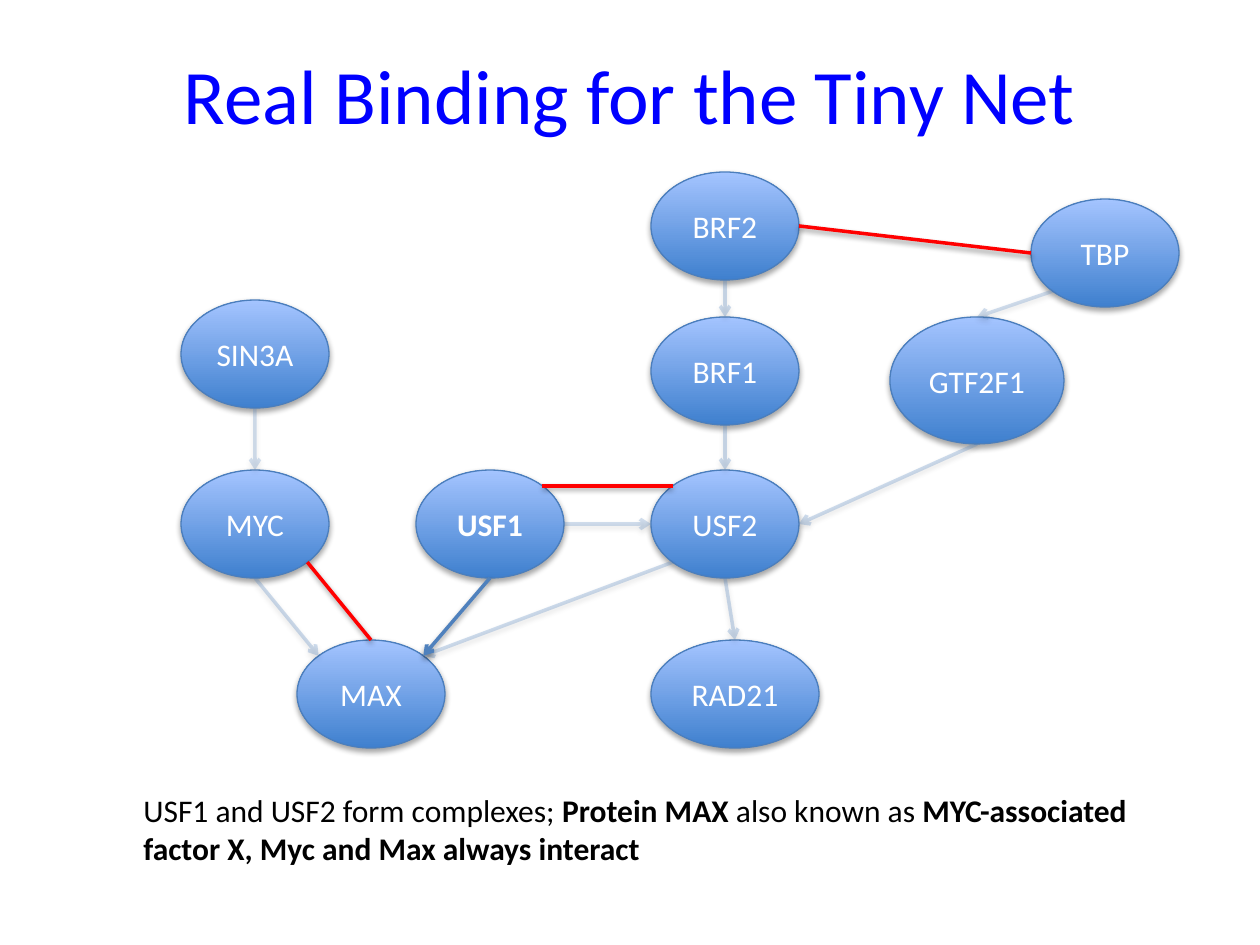
import math
from dataclasses import dataclass

import lxml.etree
import pptx
import pptx.dml.color
import pptx.enum.shapes
import pptx.enum.text
import pptx.oxml.ns
import pptx.util

EMU_PER_PX = 914400 / 126
FONT = "Calibri"
BLUE, RED = "4F81BD", "FF0000"

# Connection sites of an ellipse, counter-clockwise from the top
TOP, TOP_LEFT, LEFT, BOTTOM_LEFT, BOTTOM, BOTTOM_RIGHT, RIGHT, TOP_RIGHT = range(8)


@dataclass
class Protein:
    name: str
    left: int
    top: int
    width: int = 148
    height: int = 108
    bold: bool = False

    def site(self, index: int) -> tuple[float, float]:
        angle = math.radians(90 + 45 * index)
        return (self.left + self.width / 2 * (1 + math.cos(angle)),
                self.top + self.height / 2 * (1 - math.sin(angle)))


@dataclass
class Binding:
    source: str
    source_site: int
    target: str
    target_site: int
    opacity: int = 28
    color: str = BLUE
    arrow: bool = True


def px(length: float) -> int:
    return pptx.util.Emu(round(length * EMU_PER_PX))


def rgb(color: str) -> pptx.dml.color.RGBColor:
    return pptx.dml.color.RGBColor.from_string(color)


def add_element(parent, tag: str, **attributes):
    values = {key: str(value) for key, value in attributes.items()}
    return lxml.etree.SubElement(parent, pptx.oxml.ns.qn(tag), values)


def add_shadow(shape, opacity: int, distance: int) -> None:
    effects = add_element(shape._element.spPr, "a:effectLst")
    shadow = add_element(effects, "a:outerShdw", blurRad=40000, dist=distance,
                         dir=5400000, rotWithShape=0)
    color = add_element(shadow, "a:srgbClr", val="000000")
    add_element(color, "a:alpha", val=opacity * 1000)


def style_run(run, size: int, color: str, bold: bool = False) -> None:
    run.font.name = FONT
    run.font.size = pptx.util.Pt(size)
    run.font.bold = bold
    run.font.color.rgb = rgb(color)


def add_text_box(slide, left: int, top: int, width: int, height: int):
    frame = slide.shapes.add_textbox(px(left), px(top), px(width), px(height)).text_frame
    frame.word_wrap = True
    return frame


def draw_protein(slide, protein: Protein):
    oval = slide.shapes.add_shape(
        pptx.enum.shapes.MSO_SHAPE.OVAL, px(protein.left), px(protein.top),
        px(protein.width), px(protein.height))
    oval.fill.gradient()
    oval.fill.gradient_angle = 90
    for stop, color in zip(oval.fill.gradient_stops, ("3F80CE", "A4C4FF")):
        stop.color.rgb = rgb(color)
    oval.line.color.rgb = rgb("4B7EBC")
    oval.line.width = pptx.util.Pt(0.75)
    add_shadow(oval, 35, 23000)

    frame = oval.text_frame
    frame.margin_left = frame.margin_right = 0
    frame.vertical_anchor = pptx.enum.text.MSO_ANCHOR.MIDDLE
    frame.text = protein.name
    label = frame.paragraphs[0]
    label.alignment = pptx.enum.text.PP_ALIGN.CENTER
    style_run(label.runs[0], 18, "FFFFFF", protein.bold)
    return oval


def draw_binding(slide, binding: Binding, proteins: dict[str, Protein], ovals: dict) -> None:
    start = proteins[binding.source].site(binding.source_site)
    end = proteins[binding.target].site(binding.target_site)
    link = slide.shapes.add_connector(
        pptx.enum.shapes.MSO_CONNECTOR.STRAIGHT, *map(px, start + end))
    link.line.width = pptx.util.Pt(2)
    link.line.color.rgb = rgb(binding.color)

    line = link._element.spPr.find(pptx.oxml.ns.qn("a:ln"))
    if binding.opacity < 100:
        color = line.find(".//" + pptx.oxml.ns.qn("a:srgbClr"))
        add_element(color, "a:alpha", val=binding.opacity * 1000)
    if binding.arrow:
        add_element(line, "a:tailEnd", type="arrow")
    add_shadow(link, 38, 20000)

    # An ellipse has eight sites, so the joins are written directly
    joins = link._element.find(".//" + pptx.oxml.ns.qn("p:cNvCxnSpPr"))
    add_element(joins, "a:stCxn", id=ovals[binding.source].shape_id, idx=binding.source_site)
    add_element(joins, "a:endCxn", id=ovals[binding.target].shape_id, idx=binding.target_site)


COLUMN_1, COLUMN_2, COLUMN_3 = range(181, 652, 235)
MIDDLE_ROW, BOTTOM_ROW = 470, 640

PROTEINS = [
    Protein("SIN3A", COLUMN_1, 300),
    Protein("MYC", COLUMN_1, MIDDLE_ROW),
    Protein("MAX", 297, BOTTOM_ROW),
    Protein("USF1", COLUMN_2, MIDDLE_ROW, bold=True),
    Protein("USF2", COLUMN_3, MIDDLE_ROW),
    Protein("BRF1", COLUMN_3, 317),
    Protein("BRF2", COLUMN_3, 172),
    Protein("RAD21", COLUMN_3, BOTTOM_ROW, width=168),
    Protein("GTF2F1", 890, 317, width=174, height=127),
    Protein("TBP", 1031, 199),
]

BINDINGS = [
    Binding("SIN3A", BOTTOM, "MYC", TOP, opacity=23),
    Binding("MYC", BOTTOM, "MAX", TOP_LEFT),
    Binding("BRF1", BOTTOM, "USF2", TOP),
    Binding("BRF2", BOTTOM, "BRF1", TOP),
    Binding("USF1", RIGHT, "USF2", LEFT, opacity=26),
    Binding("USF2", BOTTOM, "RAD21", TOP),
    Binding("USF2", BOTTOM_LEFT, "MAX", TOP_RIGHT),
    Binding("USF1", BOTTOM, "MAX", TOP_RIGHT, opacity=100),
    Binding("GTF2F1", BOTTOM, "USF2", RIGHT),
    Binding("TBP", BOTTOM_LEFT, "GTF2F1", TOP, opacity=26),
    Binding("USF1", TOP_RIGHT, "USF2", TOP_LEFT, 100, RED, False),
    Binding("MYC", BOTTOM_RIGHT, "MAX", TOP, 100, RED, False),
    Binding("BRF2", RIGHT, "TBP", LEFT, 100, RED, False),
]

NOTE = [
    ("USF1 and USF2 form complexes; ", False),
    ("Protein MAX ", True),
    ("also known as ", False),
    ("MYC-associated factor X, Myc and Max always interact", True),
]


def main() -> None:
    deck = pptx.Presentation()
    deck.slide_width, deck.slide_height = px(1260), px(945)
    slide = deck.slides.add_slide(deck.slide_layouts[6])

    # Title
    title = add_text_box(slide, 63, 15, 1134, 158)
    title.vertical_anchor = pptx.enum.text.MSO_ANCHOR.MIDDLE
    title.text = "Real Binding for the Tiny Net"
    title.paragraphs[0].alignment = pptx.enum.text.PP_ALIGN.CENTER
    style_run(title.paragraphs[0].runs[0], 44, "0000FF")

    # Network
    proteins = {protein.name: protein for protein in PROTEINS}
    ovals = {protein.name: draw_protein(slide, protein) for protein in PROTEINS}
    for binding in BINDINGS:
        draw_binding(slide, binding, proteins, ovals)

    # Note below the network
    note = add_text_box(slide, 131, 785, 1042, 89).paragraphs[0]
    for text, bold in NOTE:
        run = note.add_run()
        run.text = text
        style_run(run, 18, "000000", bold)

    deck.save("out.pptx")


if __name__ == "__main__":
    main()
